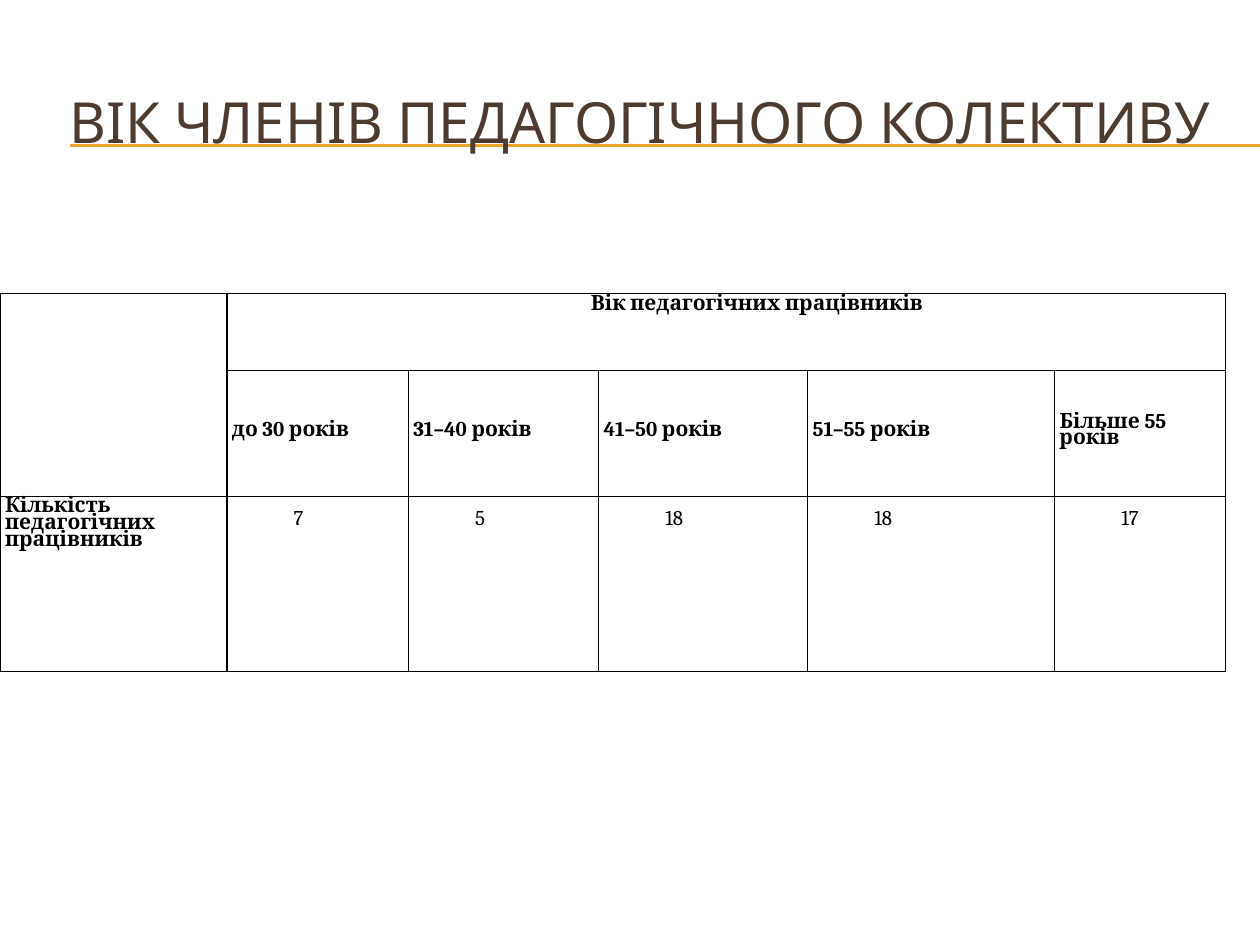
from lxml import etree
from pptx import Presentation
from pptx.dml.color import RGBColor
from pptx.enum.shapes import MSO_CONNECTOR
from pptx.enum.text import MSO_ANCHOR, PP_ALIGN
from pptx.oxml.ns import qn
from pptx.util import Pt

STRAIGHT = MSO_CONNECTOR.STRAIGHT
CENTER, LEFT = PP_ALIGN.CENTER, PP_ALIGN.LEFT
TOP, MIDDLE = MSO_ANCHOR.TOP, MSO_ANCHOR.MIDDLE

COLORS = {"title": "4E3B30", "rule": "F0A22E", "text": "000000", "border": "000000"}
COLUMN_WIDTHS = [129.6, 103.7, 108.7, 119.5, 141.1, 97.9]
ROW_HEIGHTS = [43.9, 72, 100.1]
ROWS = [
    ["", "Вік педагогічних працівників", "", "", "", ""],
    ["", "до 30 років", "31–40 років", "41–50 років", "51–55 років", "Більше 55 років"],
    ["Кількість педагогічних працівників", "7", "5", "18", "18", "17"],
]
INDENT = Pt(35.3)


def style_text(paragraph, font_name, size, color, bold=False):
    for span in paragraph.runs:
        span.font.name = font_name
        span.font.size = Pt(size)
        span.font.bold = bold
        span.font.color.rgb = RGBColor.from_string(COLORS[color])


def add_borders(cell):
    properties = cell._tc.get_or_add_tcPr()
    for side in ("lnL", "lnR", "lnT", "lnB"):
        line = etree.SubElement(properties, qn("a:" + side), w=str(Pt(1)))
        fill = etree.SubElement(line, qn("a:solidFill"))
        etree.SubElement(fill, qn("a:srgbClr"), val=COLORS["border"])


deck = Presentation()
deck.slide_width, deck.slide_height = Pt(720), Pt(540)
page = deck.slides.add_slide(deck.slide_layouts[5])

# Double rule behind the title
for y in (82.8, 83.5):
    rule = page.shapes.add_connector(STRAIGHT, Pt(40.3), Pt(y), Pt(720), Pt(y))
    rule.line.color.rgb = RGBColor.from_string(COLORS["rule"])
    rule.line.width = Pt(0.75)
    etree.SubElement(rule._element.spPr, qn("a:effectLst"))

title = page.shapes.title
title.left, title.top, title.width, title.height = Pt(23.8), Pt(36), Pt(684), Pt(66.2)
title.text_frame.text = "ВІК ЧЛЕНІВ ПЕДАГОГІЧНОГО КОЛЕКТИВУ"
title.text_frame.vertical_anchor = MIDDLE
heading = title.text_frame.paragraphs[0]
heading.alignment = CENTER
style_text(heading, "Karla", 32.4, "title")
# Bring the title in front of the rules
page.shapes._spTree.append(title._element)

# Age table
frame = page.shapes.add_table(
    len(ROWS), len(COLUMN_WIDTHS), Pt(0), Pt(167.8), Pt(sum(COLUMN_WIDTHS)), Pt(sum(ROW_HEIGHTS))
)
table = frame.table
table.first_row = table.horz_banding = False
for column, width in zip(table.columns, COLUMN_WIDTHS):
    column.width = Pt(width)
for row, height in zip(table.rows, ROW_HEIGHTS):
    row.height = Pt(height)
table.cell(0, 0).merge(table.cell(1, 0))
table.cell(0, 1).merge(table.cell(0, 5))

for r, texts in enumerate(ROWS):
    for c, text in enumerate(texts):
        cell = table.cell(r, c)
        add_borders(cell)
        cell.fill.background()
        cell.margin_left = cell.margin_right = Pt(2.9)
        cell.margin_top = cell.margin_bottom = Pt(2.9)
        cell.vertical_anchor = MIDDLE if r == 1 else TOP
        if not text:
            continue
        is_count = r == 2 and c > 0
        cell.text_frame.text = text
        paragraph = cell.text_frame.paragraphs[0]
        paragraph.alignment = CENTER if r == 0 else LEFT
        paragraph.line_spacing = 1.2 if is_count else Pt(9.5)
        if r == 0 or is_count:
            paragraph._p.get_or_add_pPr().set("indent", str(INDENT))
        style_text(paragraph, "Cambria", 12, "text", bold=not is_count)

deck.save("out.pptx")
